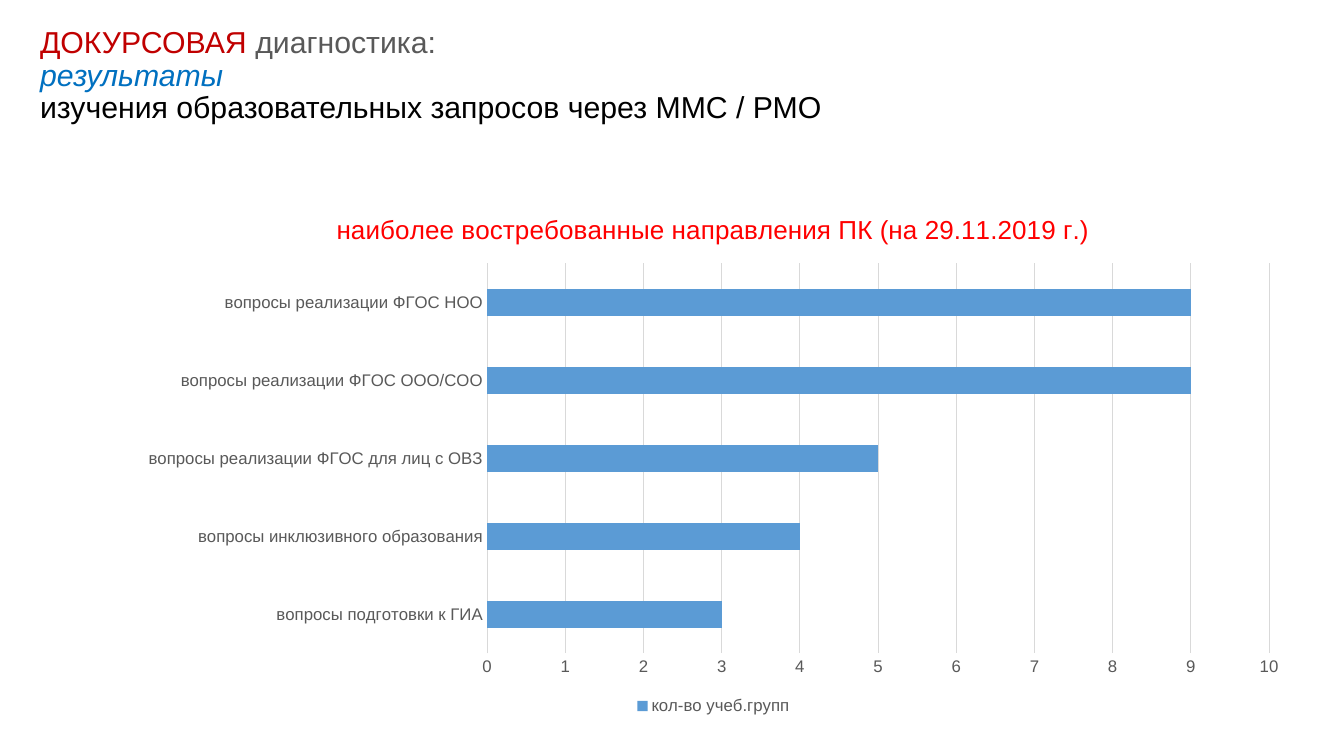
from pptx import Presentation, util as u
from pptx.chart.data import CategoryChartData
from pptx.dml.color import RGBColor
from pptx.enum import chart as ch, text

FONT = "Arial"
DARK_RED = RGBColor(0xC0, 0x00, 0x00)
RED = RGBColor(0xFF, 0x00, 0x00)
GREY = RGBColor(0x59, 0x59, 0x59)
LIGHT_GREY = RGBColor(0xD9, 0xD9, 0xD9)
BLUE = RGBColor(0x00, 0x70, 0xC0)
BAR_BLUE = RGBColor(0x5B, 0x9B, 0xD5)
BLACK = RGBColor(0x00, 0x00, 0x00)

GROUPS = [
    ("вопросы подготовки к ГИА", 3),
    ("вопросы инклюзивного образования", 4),
    ("вопросы реализации ФГОС для лиц с ОВЗ", 5),
    ("вопросы реализации ФГОС ООО/СОО", 9),
    ("вопросы реализации ФГОС НОО", 9),
]


def px(n):
    return u.Emu(round(n * 914400 / 100.8))


def style(font, size, color):
    font.name, font.size = FONT, u.Pt(size)
    font.bold = False
    font.color.rgb = color


def add_heading(s, x, y, w, h):
    sp = s.shapes.title
    sp.left, sp.top, sp.width, sp.height = map(px, (x, y, w, h))
    tf = sp.text_frame
    tf.word_wrap = True
    tf.auto_size = text.MSO_AUTO_SIZE.NONE
    tf.vertical_anchor = text.MSO_ANCHOR.MIDDLE
    tf.margin_left = tf.margin_right = px(10)
    tf.margin_top, tf.margin_bottom = px(5), px(37)
    p = tf.paragraphs[0]
    p.alignment = text.PP_ALIGN.LEFT
    p.line_spacing = 0.9
    p.font.name, p.font.size = FONT, u.Pt(21.6)
    # Each line is a list of (wording, colour, italic)
    lines = [
        [("ДОКУРСОВАЯ ", DARK_RED, False), ("диагностика:", GREY, False)],
        [("результаты", BLUE, True)],
        [("изучения образовательных запросов через ММС / РМО", BLACK, False)],
    ]
    for i, line in enumerate(lines):
        if i:
            p.add_line_break()
        for wording, color, italic in line:
            r = p.add_run()
            r.text = wording
            r.font.color.rgb = color
            r.font.italic = italic


def add_demand_chart(s, x, y, w, h):
    data = CategoryChartData()
    data.categories = [name for name, _ in GROUPS]
    data.add_series("кол-во учеб.групп", [count for _, count in GROUPS])
    chart = s.shapes.add_chart(ch.XL_CHART_TYPE.BAR_CLUSTERED,
                               *map(px, (x, y, w, h)), data).chart
    style(chart.font, 10, BLACK)

    # Chart title
    chart.has_title = True
    tf = chart.chart_title.text_frame
    tf.text = "наиболее востребованные направления ПК (на 29.11.2019 г.)"
    style(tf.paragraphs[0].font, 18.6, RED)
    chart.chart_title.include_in_layout = False

    # Bars
    plot = chart.plots[0]
    plot.gap_width = 182
    plot.vary_by_categories = False
    fill = plot.series[0].format.fill
    fill.solid()
    fill.fore_color.rgb = BAR_BLUE

    # Axes
    cat, val = chart.category_axis, chart.value_axis
    for axis in (cat, val):
        axis.major_tick_mark = axis.minor_tick_mark = ch.XL_TICK_MARK.NONE
        style(axis.tick_labels.font, 12, GREY)
    val.minimum_scale, val.maximum_scale, val.major_unit = 0, 10, 1
    val.has_major_gridlines = True
    val.format.line.fill.background()
    for line in (cat.format.line, val.major_gridlines.format.line):
        line.color.rgb = LIGHT_GREY
        line.width = u.Pt(0.75)

    # Legend
    chart.has_legend = True
    chart.legend.position = ch.XL_LEGEND_POSITION.BOTTOM
    chart.legend.include_in_layout = False
    style(chart.legend.font, 12, GREY)


def main():
    prs = Presentation()
    prs.slide_width, prs.slide_height = px(1344), px(756)
    s = prs.slides.add_slide(prs.slide_layouts[5])
    add_heading(s, 30, 20, 1159, 145)
    add_demand_chart(s, 125, 192, 1177, 527)
    prs.save("out.pptx")


if __name__ == "__main__":
    main()
